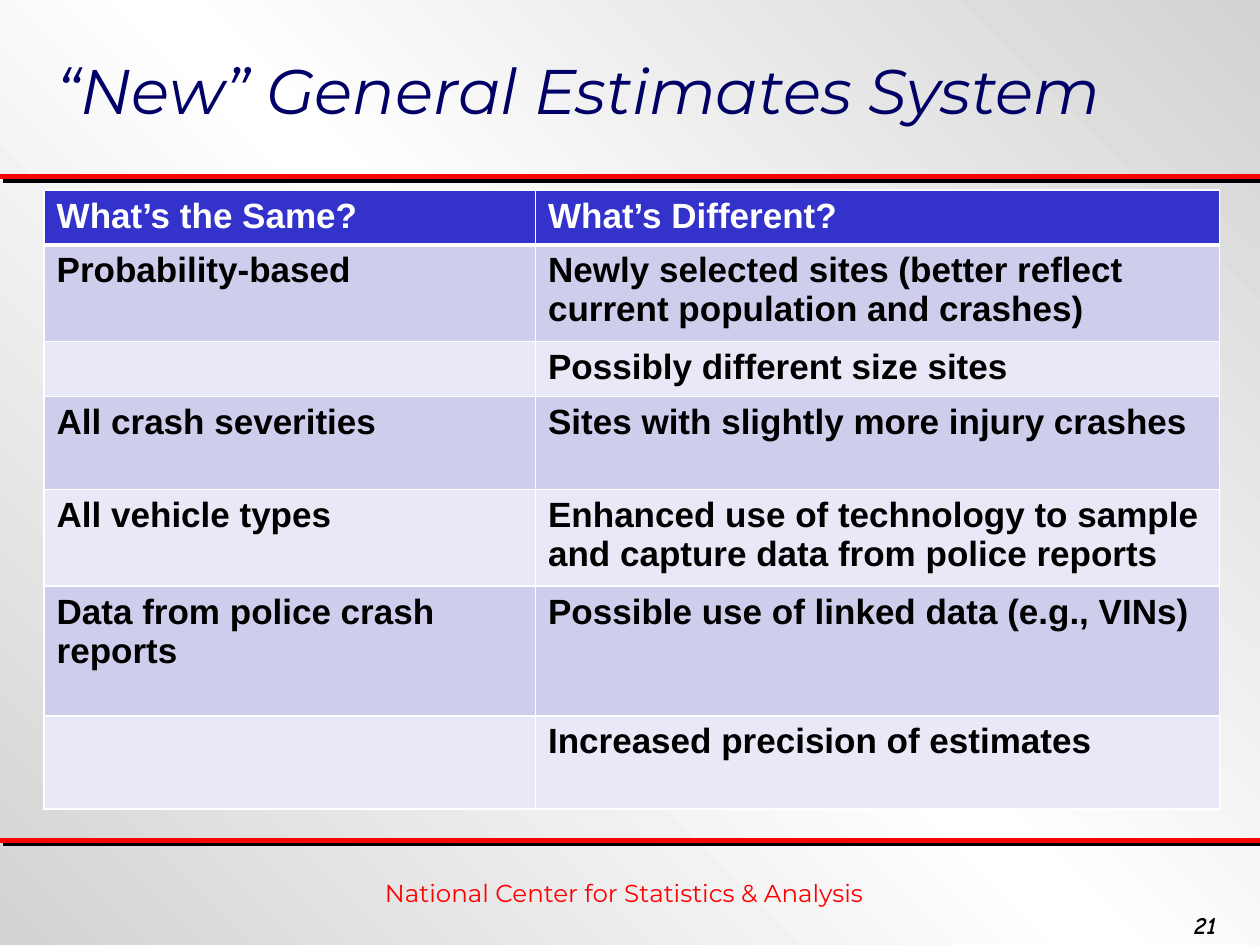
from lxml import etree
from pptx import Presentation
from pptx.dml.color import RGBColor
from pptx.enum.shapes import MSO_CONNECTOR as Connector
from pptx.enum.text import MSO_ANCHOR as Anchor, PP_ALIGN as Align
from pptx.oxml import parse_xml
from pptx.oxml.ns import nsdecls, qn
from pptx.util import Inches, Pt

RED = RGBColor(0xFF, 0x00, 0x00)
NAVY = RGBColor(0x00, 0x00, 0x66)
BLACK = RGBColor(0x00, 0x00, 0x00)
WHITE = RGBColor(0xFF, 0xFF, 0xFF)
HEADER_BLUE = RGBColor(0x33, 0x33, 0xCC)
BANDS = (RGBColor(0xE8, 0xE8, 0xF6), RGBColor(0xCE, 0xCE, 0xEC))
SILVER = RGBColor(0xD3, 0xD3, 0xD3)

WIDTH, HEIGHT = 10, 7.5
COLUMNS = (3.9, 5.43)
ROWS = (
    (0.42, "What’s the Same?", "What’s Different?"),
    (0.72, "Probability-based",
     "Newly selected sites (better reflect current population and crashes)"),
    (0.42, "", "Possibly different size sites"),
    (0.74, "All crash severities", "Sites with slightly more injury crashes"),
    (0.74, "All vehicle types",
     "Enhanced use of technology to sample and capture data from police reports"),
    (1.03, "Data from police crash reports", "Possible use of linked data (e.g., VINs)"),
    (0.74, "", "Increased precision of estimates"),
)


def paint_background(page):
    """Diagonal silver-white-silver gradient."""
    stops = "".join(
        f'<a:gs pos="{share * 1000}"><a:srgbClr val="{color}"/></a:gs>'
        for share, color in ((0, SILVER), (50, WHITE), (100, SILVER)))
    page.background.fill.solid()
    properties = page.background._cSld.bg.bgPr
    properties.replace(properties[0], parse_xml(
        f'<a:gradFill {nsdecls("a")} rotWithShape="1"><a:gsLst>{stops}</a:gsLst>'
        f'<a:lin ang="{315 * 60000}" scaled="0"/></a:gradFill>'))


def style(para, size, color, name, bold=False, italic=False):
    font = para.font
    font.size, font.name = Pt(size), name
    font.bold, font.italic = bold, italic
    font.color.rgb = color


def add_text(page, box, text, size, color, name, bold=False, italic=False,
             align=Align.LEFT, anchor=Anchor.TOP, spacing=None):
    frame = page.shapes.add_textbox(*map(Inches, box)).text_frame
    frame.word_wrap = True
    frame.vertical_anchor = anchor
    para = frame.paragraphs[0]
    para.text, para.alignment, para.line_spacing = text, align, spacing
    style(para, size, color, name, bold, italic)


def add_rule(page, top):
    """Full-width red rule with a hard black shadow."""
    rule = page.shapes.add_connector(
        Connector.STRAIGHT, 0, Inches(top), Inches(WIDTH), Inches(top))
    rule.line.color.rgb = RED
    rule.line.width = Pt(3)
    rule._element.spPr.append(parse_xml(
        f'<a:effectLst {nsdecls("a")}><a:outerShdw dist="{Pt(2.8)}" '
        f'dir="{45 * 60000}" algn="ctr" rotWithShape="0">'
        f'<a:srgbClr val="{BLACK}"/></a:outerShdw></a:effectLst>'))


def add_borders(cell, bottom):
    properties = cell._tc.get_or_add_tcPr()
    for side, width in (("L", 1), ("R", 1), ("T", 1), ("B", bottom)):
        line = etree.SubElement(properties, qn(f"a:ln{side}"), w=str(Pt(width)))
        fill = etree.SubElement(line, qn("a:solidFill"))
        etree.SubElement(fill, qn("a:srgbClr"), val=str(WHITE))


def add_comparison(page, left, top):
    """Two-column table with a blue header and alternating bands."""
    height = sum(row[0] for row in ROWS)
    table = page.shapes.add_table(
        len(ROWS), len(COLUMNS), Inches(left), Inches(top),
        Inches(sum(COLUMNS)), Inches(height)).table
    for column, width in zip(table.columns, COLUMNS):
        column.width = Inches(width)
    for index, (row_height, *texts) in enumerate(ROWS):
        table.rows[index].height = Inches(row_height)
        header = index == 0
        for position, text in enumerate(texts):
            cell = table.cell(index, position)
            add_borders(cell, 3 if header else 1)
            cell.fill.solid()
            cell.fill.fore_color.rgb = HEADER_BLUE if header else BANDS[index % 2]
            para = cell.text_frame.paragraphs[0]
            if text:
                para.text = text
            style(para, 20, WHITE if header else BLACK, "Arial", bold=True)


def add_footer(page, top):
    """Rule, organisation name and page number."""
    add_rule(page, top)
    add_text(page, (0.58, top + 0.25, 8.75, 0.33),
             "National Center for Statistics & Analysis",
             14, RED, "Montserrat", align=Align.CENTER)
    add_text(page, (9.38, top + 0.5, 0.96, 0.33), "21",
             14, BLACK, "Comic Neue", bold=True, italic=True)


def add_heading(page, box):
    """Title above the upper rule."""
    add_text(page, box, "“New” General Estimates System", 36, NAVY, "Montserrat",
             italic=True, anchor=Anchor.MIDDLE, spacing=0.9)
    add_rule(page, box[1] + box[3] + 0.15)


def main():
    deck = Presentation()
    deck.slide_width, deck.slide_height = Inches(WIDTH), Inches(HEIGHT)
    page = deck.slides.add_slide(deck.slide_layouts[6])
    paint_background(page)
    add_heading(page, (0.35, 0.25, 9.49, 1))
    add_comparison(page, 0.35, 1.51)
    add_footer(page, 6.67)
    deck.save("out.pptx")


if __name__ == "__main__":
    main()
